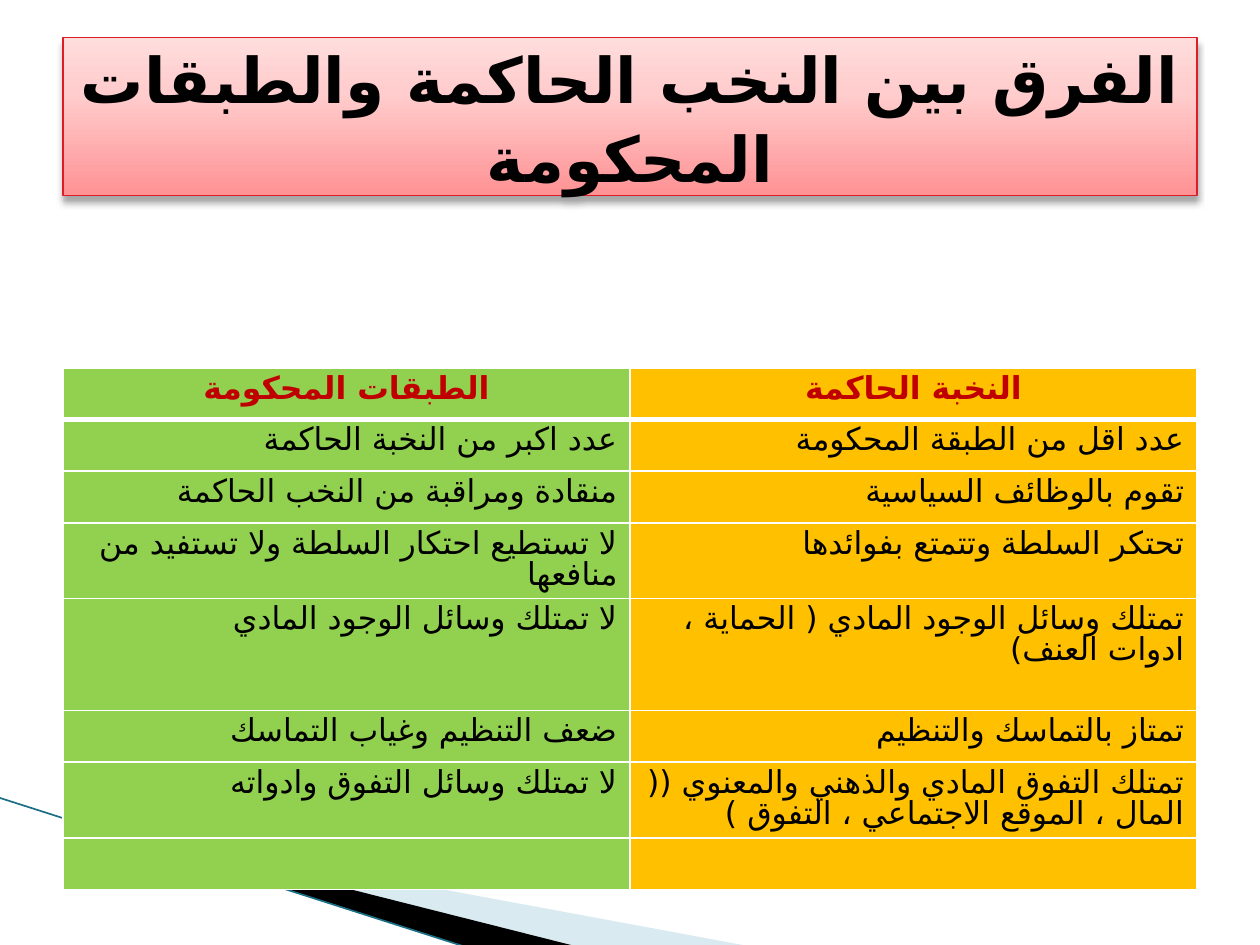
from dataclasses import dataclass
import pptx
import pptx.util
import pptx.oxml
import pptx.oxml.ns
import pptx.dml.color
import pptx.enum.text
import pptx.enum.shapes

Inch = pptx.util.Inches
Pt = pptx.util.Pt
qn = pptx.oxml.ns.qn
Align = pptx.enum.text.PP_ALIGN
NS = pptx.oxml.ns.nsdecls("a")
WIDE, HIGH = 10, 7.5
EDGE = 0.05 * WIDE
SPAN = WIDE - 2 * EDGE
SCRIPT = "DejaVu Sans"

HUES = {"ink": "000000", "head": "C00000", "green": "92D050", "gold": "FFC000",
        "white": "FFFFFF", "red": "DA1F28", "pale": "A0CBDC", "line": "1B6F85",
        "deep": "FF9294", "mid": "FFCDCD", "light": "FFDCDC"}


@dataclass
class Wedge:
    points: list
    hue: str
    alpha: int = 100


@dataclass
class Row:
    left: str
    right: str
    tall: float = 0.41
    modes: tuple = (Align.RIGHT, Align.RIGHT)
    turns: tuple = (True, True)
    format: str = "body"


FORMATS = {
    "title": {"size": Pt(36), "bold": True, "name": "Lato"},
    "head": {"size": Pt(18), "bold": True, "name": "Courier New"},
    "body": {"size": Pt(18), "bold": False, "name": "Courier New"},
}
INKS = {"title": "ink", "head": "head", "body": "ink"}
LEADS = {"title": 1.04, "head": 0.85, "body": 0.85}

WEDGES = [
    Wedge([(0.55, 6.51), (5.95, 7.51), (4.56, 7.51), (0.55, 6.5)], "pale", 40),
    Wedge([(0.53, 6.49), (4.57, 7.51), (3.72, 7.52), (0.54, 6.5)], "ink"),
]

FLUSH = (Align.RIGHT, Align.JUSTIFY)
ROWS = [
    Row("الطبقات المحكومة", "النخبة الحاكمة", modes=(Align.CENTER, Align.CENTER),
        turns=(False, False), format="head"),
    Row("عدد اكبر من النخبة الحاكمة", "عدد اقل من الطبقة المحكومة",
        modes=FLUSH, turns=(False, True)),
    Row("منقادة ومراقبة من النخب الحاكمة", "تقوم بالوظائف السياسية", modes=FLUSH),
    Row("لا تستطيع احتكار السلطة ولا تستفيد من منافعها",
        "تحتكر السلطة وتتمتع بفوائدها", 0.6),
    Row("لا تمتلك وسائل الوجود المادي",
        "تمتلك وسائل الوجود المادي ( الحماية ، ادوات العنف)", 0.89),
    Row("ضعف التنظيم وغياب التماسك", "تمتاز بالتماسك والتنظيم"),
    Row("لا تمتلك وسائل التفوق وادواته",
        "تمتلك التفوق المادي والذهني والمعنوي (( المال ، الموقع الاجتماعي ، التفوق )", 0.6),
    Row("", ""),
]


def color(hue: str):
    return pptx.dml.color.RGBColor.from_string(HUES[hue])


def node(text: str):
    return pptx.oxml.parse_xml(text.replace(">", f" {NS}>", 1))


def write(para, text: str, format: str, mode, turn: bool = False) -> None:
    para.alignment = mode
    para.line_spacing = LEADS[format]
    if turn:
        para._p.get_or_add_pPr().set("rtl", "1")
    if not text:
        return
    run = para.add_run()
    run.text = text
    for key, value in FORMATS[format].items():
        setattr(run.font, key, value)
    run.font.color.rgb = color(INKS[format])
    run._r.rPr.append(node(f'<a:cs typeface="{SCRIPT}"></a:cs>'))


def draw_wedge(shapes, wedge: Wedge) -> None:
    first, *rest = [(Inch(x), Inch(y)) for x, y in wedge.points]
    pen = shapes.build_freeform(*first)
    pen.add_line_segments(rest, close=True)
    shape = pen.convert_to_shape()
    shape.shadow.inherit = False
    shape.fill.solid()
    shape.fill.fore_color.rgb = color(wedge.hue)
    shape.line.fill.background()
    if wedge.alpha < 100:
        tint = shape._element.spPr.find(qn("a:solidFill"))[0]
        tint.append(node(f'<a:alpha val="{wedge.alpha * 1000}"></a:alpha>'))


def draw_line(shapes) -> None:
    line = shapes.add_connector(pptx.enum.shapes.MSO_CONNECTOR.STRAIGHT,
                                Inch(-0.01), Inch(6.33), Inch(3.71), Inch(7.52))
    line.line.color.rgb = color("line")
    line.line.width = Pt(0.95)
    line._element.spPr.append(node("<a:effectLst></a:effectLst>"))


def edge_cell(cell, top: int, base: int) -> None:
    props = cell._tc.get_or_add_tcPr()
    for spot, (side, width) in enumerate(zip("LRTB", (1, 1, top, base))):
        props.insert(spot, node(
            f'<a:ln{side} w="{Pt(width)}"><a:solidFill>'
            f'<a:srgbClr val="{HUES["white"]}"/></a:solidFill></a:ln{side}>'))


def draw_table(shapes) -> None:
    frame = shapes.add_table(len(ROWS), 2, Inch(EDGE), Inch(2.92), Inch(SPAN),
                             Inch(sum(row.tall for row in ROWS)))
    table = frame.table
    table.first_row = table.horz_banding = False
    for r, row in enumerate(ROWS):
        table.rows[r].height = Inch(row.tall)
        for c, text in enumerate((row.left, row.right)):
            cell = table.cell(r, c)
            cell.fill.solid()
            cell.fill.fore_color.rgb = color(("green", "gold")[c])
            edge_cell(cell, 3 if r == 1 else 1, 3 if r == 0 else 1)
            write(cell.text_frame.paragraphs[0], text, row.format,
                  row.modes[c], row.turns[c])


def draw_title(shapes) -> None:
    title = shapes.title
    shapes._spTree.append(title._element)
    title.left, title.top = Inch(EDGE), Inch(0.04 * HIGH)
    title.width, title.height = Inch(SPAN), Inch(HIGH / 6)
    stops = "".join(f'<a:gs pos="{at * 1000}"><a:srgbClr val="{HUES[hue]}"/></a:gs>'
                    for at, hue in ((0, "deep"), (65, "mid"), (100, "light")))
    props = title._element.spPr
    props.append(node(f'<a:gradFill><a:gsLst>{stops}</a:gsLst>'
                      '<a:lin ang="16200000" scaled="0"/></a:gradFill>'))
    title.line.color.rgb = color("red")
    title.line.width = Pt(0.75)
    props.append(node(
        f'<a:effectLst><a:outerShdw blurRad="{Pt(4)}" dist="{Pt(3)}" dir="5400000" '
        f'rotWithShape="0"><a:srgbClr val="{HUES["ink"]}"><a:alpha val="35000"/>'
        '</a:srgbClr></a:outerShdw></a:effectLst>'))
    frame = title.text_frame
    frame.word_wrap = True
    frame.auto_size = pptx.enum.text.MSO_AUTO_SIZE.NONE
    frame.vertical_anchor = pptx.enum.text.MSO_ANCHOR.MIDDLE
    write(frame.paragraphs[0], "الفرق بين النخب الحاكمة والطبقات المحكومة",
          "title", Align.CENTER)


def main() -> None:
    deck = pptx.Presentation()
    deck.slide_width, deck.slide_height = Inch(WIDE), Inch(HIGH)
    shapes = deck.slides.add_slide(deck.slide_layouts[5]).shapes
    for wedge in WEDGES:
        draw_wedge(shapes, wedge)
    draw_line(shapes)
    draw_table(shapes)
    draw_title(shapes)
    deck.save("out.pptx")


if __name__ == "__main__":
    main()
